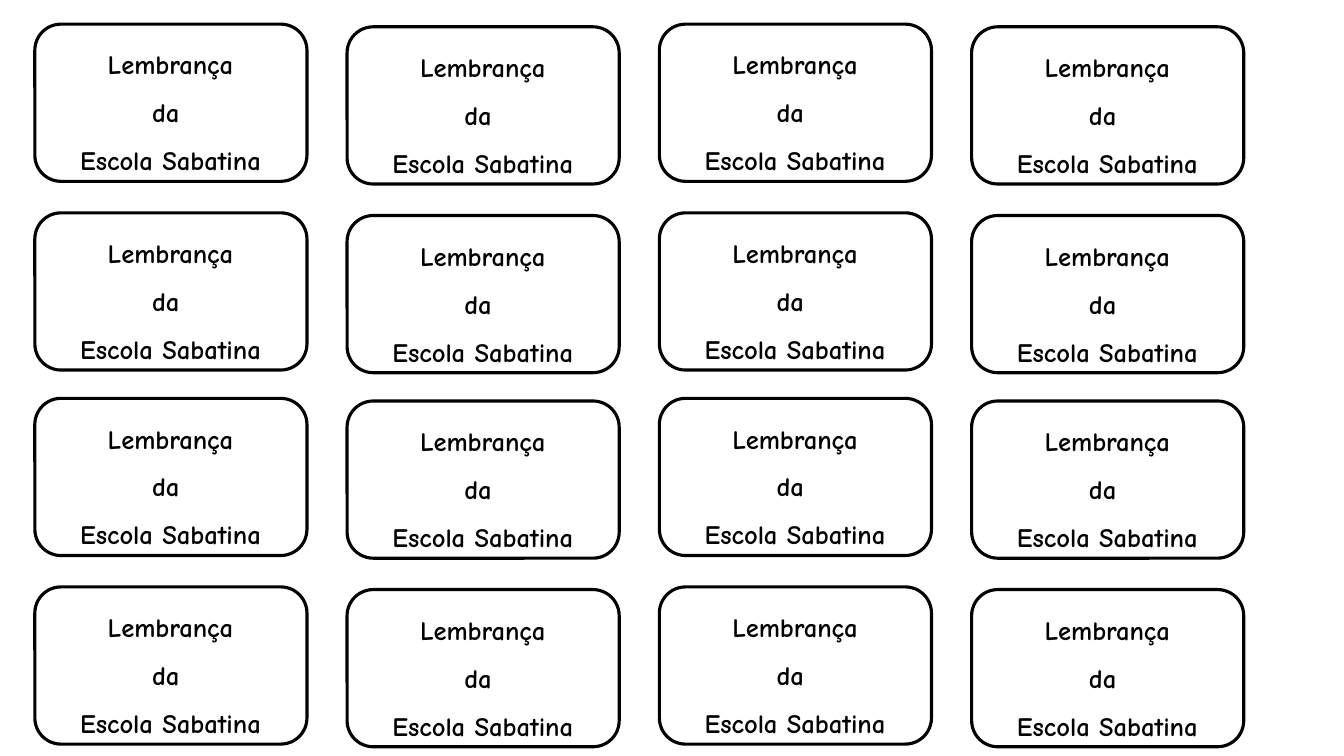
from dataclasses import dataclass
from itertools import product

from pptx import Presentation
from pptx.dml.color import RGBColor
from pptx.enum.shapes import MSO_SHAPE
from pptx.enum.text import MSO_AUTO_SIZE, PP_ALIGN
from pptx.slide import Slide
from pptx.util import Pt

ROUNDED = MSO_SHAPE.ROUNDED_RECTANGLE
GROW = MSO_AUTO_SIZE.SHAPE_TO_FIT_TEXT
CENTER = PP_ALIGN.CENTER

SLIDE_WIDTH, SLIDE_HEIGHT = 960, 540
BLACK = "000000"
FRAME_WIDTH, FRAME_HEIGHT = 112.3, 194.4
FRAME_OFFSET = 41.3
GREETING_WIDTH, GREETING_HEIGHT = 194.4, 108
GREETING_OFFSET = 43.4
GREETING_LINES = ("Lembrança", "da ", "Escola Sabatina")
GREETING_FONT = {"name": "Comic Neue", "size": Pt(19), "bold": True}

COLUMN_COUNT = 4
FIRST_LEFT, COLUMN_STEP = 24.6, 223.05
ROW_TOPS = (-23.8, 111, 243.5, 378.2)
STAGGER = 1.9


@dataclass(frozen=True)
class Label:
    left: float
    top: float


def color(value: str) -> RGBColor:
    return RGBColor.from_string(value)


def draw_frame(slide: Slide, label: Label) -> None:
    frame = slide.shapes.add_shape(
        ROUNDED, Pt(label.left + FRAME_OFFSET), Pt(label.top),
        Pt(FRAME_WIDTH), Pt(FRAME_HEIGHT))
    frame.rotation = 90
    frame.shadow.inherit = False
    frame.fill.background()
    frame.line.color.rgb = color(BLACK)
    frame.line.width = Pt(2.25)


def draw_greeting(slide: Slide, label: Label) -> None:
    greeting = slide.shapes.add_textbox(
        Pt(label.left), Pt(label.top + GREETING_OFFSET),
        Pt(GREETING_WIDTH), Pt(GREETING_HEIGHT)).text_frame
    greeting.word_wrap = True
    greeting.auto_size = GROW
    greeting.text = "\n".join(GREETING_LINES)
    for line in greeting.paragraphs:
        line.alignment = CENTER
        line.line_spacing = 1.5
        font = line.runs[0].font
        for attribute, value in GREETING_FONT.items():
            setattr(font, attribute, value)
        font.color.rgb = color(BLACK)


def main() -> None:
    presentation = Presentation()
    presentation.slide_width = Pt(SLIDE_WIDTH)
    presentation.slide_height = Pt(SLIDE_HEIGHT)
    slide = presentation.slides.add_slide(presentation.slide_layouts[6])
    labels = [
        Label(FIRST_LEFT + column * COLUMN_STEP, top + column % 2 * STAGGER)
        for column, top in product(range(COLUMN_COUNT), ROW_TOPS)
    ]
    for label in labels:
        draw_frame(slide, label)
        draw_greeting(slide, label)
    presentation.save("out.pptx")


if __name__ == "__main__":
    main()
